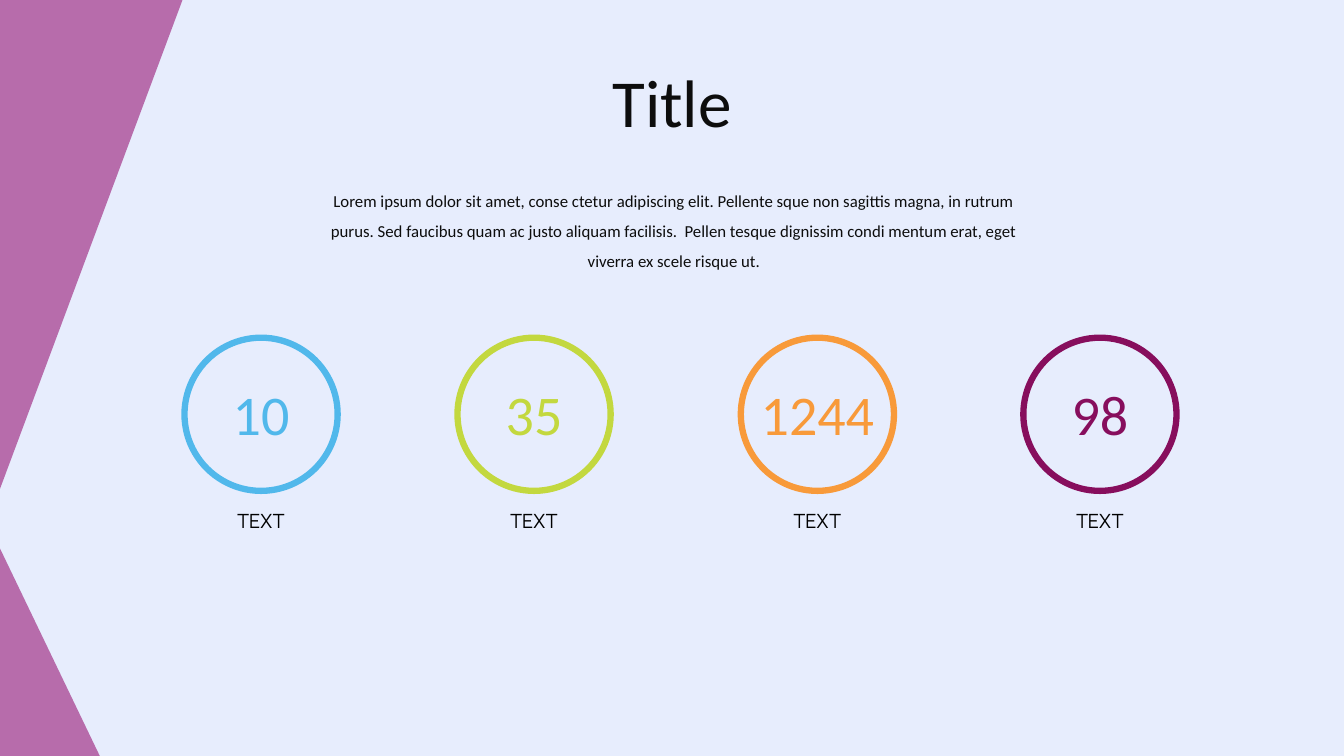
from dataclasses import dataclass

from pptx import Presentation
from pptx.dml.color import RGBColor
from pptx.enum.shapes import MSO_SHAPE
from pptx.enum.text import MSO_AUTO_SIZE, PP_ALIGN
from pptx.shapes.autoshape import Shape
from pptx.slide import Slide
from pptx.util import Cm, Pt

TRIANGLE = MSO_SHAPE.RIGHT_TRIANGLE
OVAL = MSO_SHAPE.OVAL
CENTER = PP_ALIGN.CENTER
FIT_SHAPE = MSO_AUTO_SIZE.SHAPE_TO_FIT_TEXT


@dataclass(frozen=True)
class Theme:
    background: str = "E7EDFD"
    accent: str = "B76CAB"
    ink: str = "0D0D0D"
    label: str = "000000"
    blue: str = "51B8EB"
    green: str = "C3D83F"
    orange: str = "F89A3A"
    plum: str = "870E5D"
    font: str = "Calibri"
    label_font: str = "Manrope"
    title_size: int = 48
    number_size: int = 40
    label_size: int = 14
    body_size: int = 12
    ring_line: float = 4.5


@dataclass(frozen=True)
class Box:
    """Left, top, width and height in centimetres."""
    left: float
    top: float
    width: float
    height: float


@dataclass(frozen=True)
class TextStyle:
    size: int
    color: str
    font: str
    line_spacing: float = 1.0


@dataclass(frozen=True)
class Metric:
    number: str
    label: str
    center: float
    color: str
    number_width: float = 3.0


THEME = Theme()
METRICS = [
    Metric("10", "TEXT", 6.58, THEME.blue),
    Metric("35", "TEXT", 13.46, THEME.green),
    Metric("1244", "TEXT", 20.6, THEME.orange, number_width=3.58),
    Metric("98", "TEXT", 27.72, THEME.plum),
]
BODY = (
    "Lorem ipsum dolor sit amet, conse ctetur adipiscing elit. "
    "Pellente sque non sagittis magna, in rutrum purus. "
    "Sed faucibus quam ac justo aliquam facilisis.  "
    "Pellen tesque dignissim condi mentum erat, eget viverra ex scele risque ut."
)


def centered(center: float, top: float, width: float, height: float) -> Box:
    return Box(center - width / 2, top, width, height)


def add_shape(s: Slide, kind: MSO_SHAPE, box: Box) -> Shape:
    sp = s.shapes.add_shape(
        kind, Cm(box.left), Cm(box.top), Cm(box.width), Cm(box.height))
    sp.shadow.inherit = False
    return sp


def add_triangle(s: Slide, box: Box) -> Shape:
    sp = add_shape(s, TRIANGLE, box)
    sp.fill.solid()
    sp.fill.fore_color.rgb = RGBColor.from_string(THEME.accent)
    sp.line.fill.background()
    return sp


def add_ring(s: Slide, box: Box, color: str) -> None:
    sp = add_shape(s, OVAL, box)
    sp.fill.background()
    sp.line.color.rgb = RGBColor.from_string(color)
    sp.line.width = Pt(THEME.ring_line)


def add_text(s: Slide, box: Box, text: str, style: TextStyle) -> None:
    sp = s.shapes.add_textbox(
        Cm(box.left), Cm(box.top), Cm(box.width), Cm(box.height))
    tf = sp.text_frame
    tf.word_wrap = True
    tf.auto_size = FIT_SHAPE
    tf.text = text
    p = tf.paragraphs[0]
    p.alignment = CENTER
    p.line_spacing = style.line_spacing
    r = p.runs[0]
    r.font.size = Pt(style.size)
    r.font.name = style.font
    r.font.color.rgb = RGBColor.from_string(style.color)


def add_metric(s: Slide, metric: Metric) -> None:
    add_ring(s, centered(metric.center, 8.51, 3.86, 3.86), metric.color)
    add_text(s, centered(metric.center, 9.45, metric.number_width, 1.96),
             metric.number,
             TextStyle(THEME.number_size, metric.color, THEME.font))
    add_text(s, centered(metric.center, 12.69, 3.02, 0.86), metric.label,
             TextStyle(THEME.label_size, THEME.label, THEME.label_font))


def main() -> None:
    prs = Presentation()
    prs.slide_width, prs.slide_height = Cm(33.87), Cm(19.05)
    s = prs.slides.add_slide(prs.slide_layouts[6])
    s.background.fill.solid()
    s.background.fill.fore_color.rgb = RGBColor.from_string(THEME.background)

    add_triangle(s, Box(0, 13.82, 2.54, 5.28))
    upper = add_triangle(s, Box(0, 0, 4.6, 12.32))
    upper.rotation = 180
    upper._element.spPr.xfrm.set("flipH", "1")

    add_text(s, Box(9.17, 1.4, 15.54, 2.31), "Title",
             TextStyle(THEME.title_size, THEME.ink, THEME.font))
    add_text(s, Box(8.03, 4.42, 17.91, 2.57), BODY,
             TextStyle(THEME.body_size, THEME.ink, THEME.font, line_spacing=1.5))
    for metric in METRICS:
        add_metric(s, metric)

    prs.save("out.pptx")


if __name__ == "__main__":
    main()
